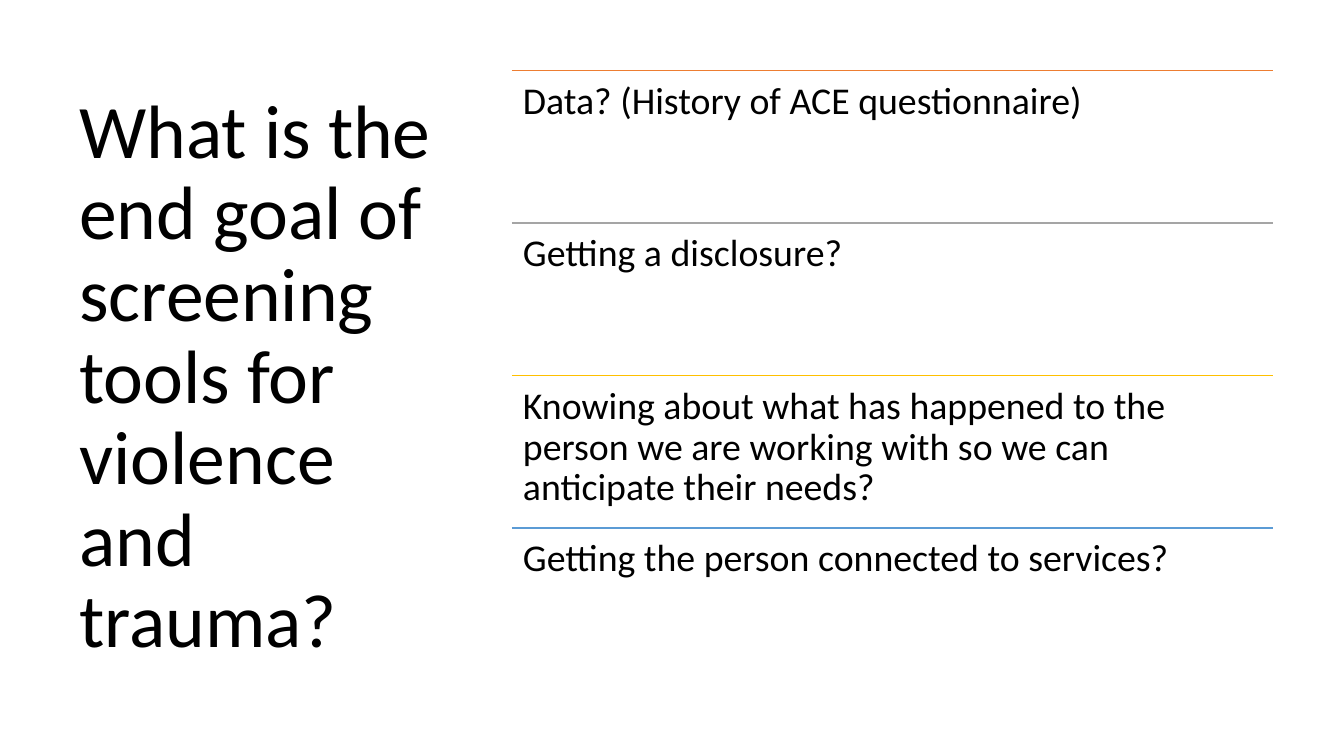
from lxml.etree import SubElement
from pptx import Presentation
from pptx.dml.color import RGBColor
from pptx.enum.shapes import MSO_CONNECTOR
from pptx.enum.text import MSO_ANCHOR
from pptx.oxml.ns import qn
from pptx.util import Cm, Pt


def color(code):
    return RGBColor.from_string(code)


def add_text(box, text, size, inset, anchor):
    """Add a wrapped text box; box is left, top, width, height in cm."""
    frame = slide.shapes.add_textbox(*map(Cm, box)).text_frame
    frame.word_wrap = True
    frame.vertical_anchor = anchor
    frame.margin_left = frame.margin_right = Cm(inset)
    frame.margin_top = frame.margin_bottom = Cm(inset)
    par = frame.paragraphs[0]
    par.text = text
    par.line_spacing = 0.9
    par.font.name = "Calibri"
    par.font.size = Pt(size)
    par.font.color.rgb = color("000000")


deck = Presentation()
deck.slide_width, deck.slide_height = Cm(33.87), Cm(19.05)
slide = deck.slides.add_slide(deck.slide_layouts[6])

top = 1.78
add_text((1.75, top, 9.5, 15.52),
         "What is the end goal of screening tools for violence and trauma?",
         54, 0.25, MSO_ANCHOR.MIDDLE)

goals = [
    ("ED7D31", "Data? (History of ACE questionnaire)"),
    ("A5A5A5", "Getting a disclosure?"),
    ("FFC000", "Knowing about what has happened to the person we are "
               "working with so we can anticipate their needs?"),
    ("5B9BD5", "Getting the person connected to services?"),
]
left, width, height = 12.9, 19.18, 3.84

for row, (hue, goal) in enumerate(goals):
    y = top + row * height
    rule = slide.shapes.add_connector(
        MSO_CONNECTOR.STRAIGHT, Cm(left), Cm(y), Cm(left + width), Cm(y))
    rule.line.color.rgb = color(hue)
    rule.line.width = Pt(1)
    SubElement(rule._element.spPr, qn("a:effectLst"))
    add_text((left, y, width, height), goal, 27, 0.28, MSO_ANCHOR.TOP)

deck.save("out.pptx")
